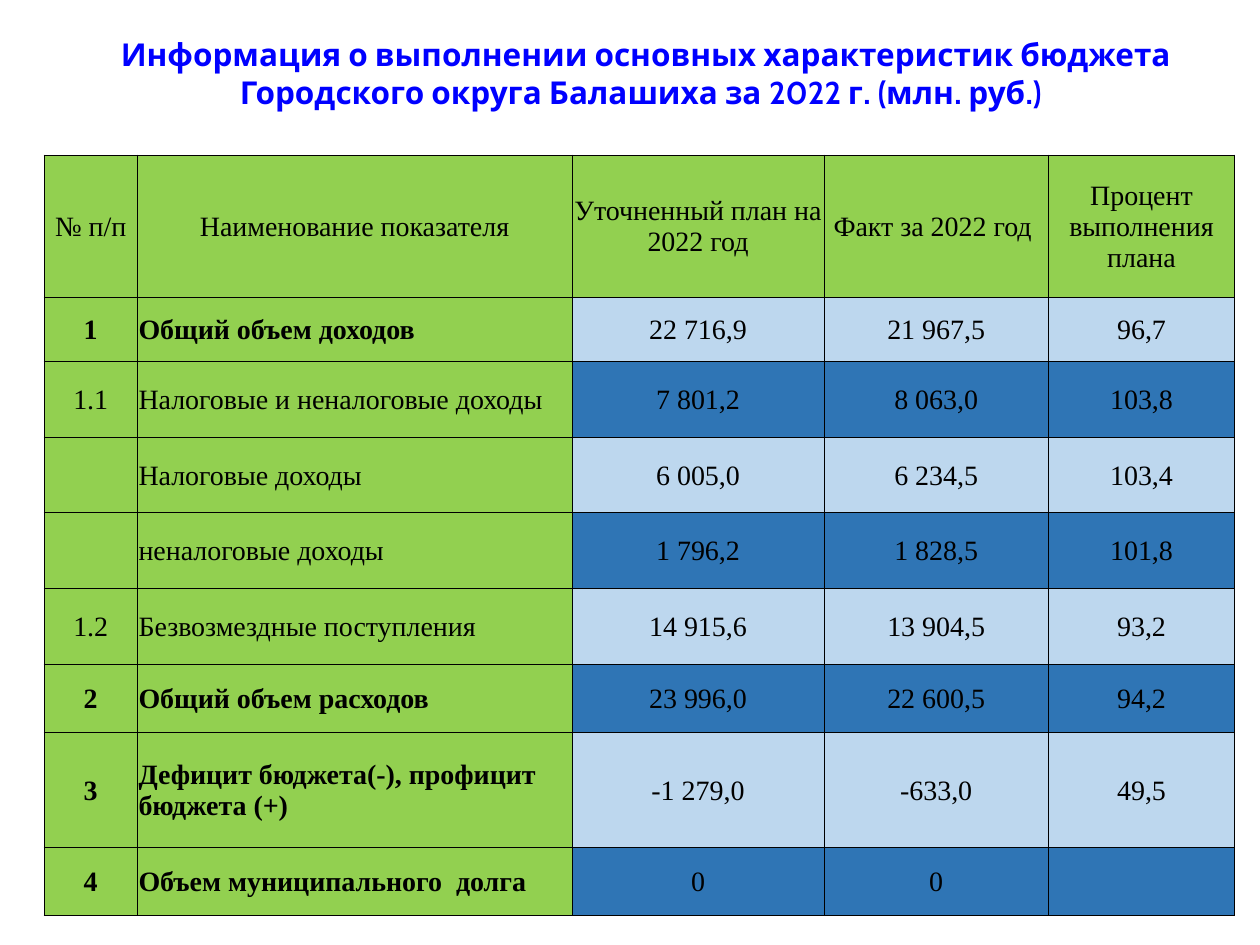
from pptx import Presentation
from pptx.dml.color import RGBColor
from pptx.enum.text import MSO_ANCHOR as Anchor, MSO_AUTO_SIZE as AutoSize, PP_ALIGN as Align
from pptx.oxml import parse_xml
from pptx.oxml.ns import nsdecls
from pptx.util import Inches, Pt

TITLE = ("Информация о выполнении основных характеристик бюджета \v"
         "Городского округа Балашиха за 2022 г. (млн. руб.)\t")
ROWS = [
    ("№ п/п", "Наименование показателя", "Уточненный план на 2022 год",
     "Факт за 2022 год ", "Процент выполнения плана"),
    ("1", "Общий объем доходов", "22 716,9", "21 967,5", "96,7"),
    ("1.1", "Налоговые и неналоговые доходы", "7 801,2", "8 063,0", "103,8"),
    ("", "Налоговые доходы", "6 005,0", "6 234,5", "103,4"),
    ("", "неналоговые доходы", "1 796,2", "1 828,5", "101,8"),
    ("1.2", "Безвозмездные поступления", "14 915,6", "13 904,5", "93,2"),
    ("2", "Общий объем расходов", "23 996,0", "22 600,5", "94,2"),
    ("3", "Дефицит бюджета(-), профицит бюджета (+)", "-1 279,0", "-633,0", "49,5"),
    ("4", "Объем муниципального  долга", "0", "0", ""),
]
COLUMN_WIDTHS = [0.74, 3.45, 2, 1.78, 1.48]
ROW_HEIGHTS = [1.13, 0.51, 0.6, 0.6, 0.6, 0.6, 0.54, 0.92, 0.54]


def color(code):
    return RGBColor.from_string(code)


class BudgetSlide:
    title_font = "Cabin"
    table_font = "Times New Roman"
    title_color = "0000FF"
    ink = "000000"
    label_fill = "92D050"
    value_fills = ("2F75B5", "BDD7EE")

    def __init__(self, deck):
        self.page = deck.slides.add_slide(deck.slide_layouts[5])

    def style(self, para, font, size, code, bold, align):
        para.alignment = align
        para.font.name = font
        para.font.size = Pt(size)
        para.font.bold = bold
        para.font.color.rgb = color(code)

    def title(self, text, left, top, width, height):
        box = self.page.shapes.title
        box.left, box.top = Inches(left), Inches(top)
        box.width, box.height = Inches(width), Inches(height)
        frame = box.text_frame
        frame.text = text
        frame.word_wrap = True
        frame.auto_size = AutoSize.SHAPE_TO_FIT_TEXT
        frame.vertical_anchor = Anchor.TOP
        self.style(frame.paragraphs[0], self.title_font, 18, self.title_color,
                   True, Align.CENTER)

    def border(self, cell):
        properties = cell._tc.get_or_add_tcPr()
        for side in ("lnL", "lnR", "lnT", "lnB"):
            properties.append(parse_xml(
                f'<a:{side} {nsdecls("a")} w="{Pt(0.5)}"><a:solidFill>'
                f'<a:srgbClr val="{self.ink}"/></a:solidFill></a:{side}>'))

    def cell(self, cell, text, fill, bold, align):
        self.border(cell)
        cell.fill.solid()
        cell.fill.fore_color.rgb = color(fill)
        cell.margin_left = cell.margin_right = cell.margin_top = Inches(0.01)
        cell.margin_bottom = 0
        cell.vertical_anchor = Anchor.MIDDLE
        cell.text = text
        self.style(cell.text_frame.paragraphs[0], self.table_font, 16, self.ink,
                   bold, align)

    def table(self, rows, widths, heights, left, top):
        table = self.page.shapes.add_table(
            len(rows), len(widths), Inches(left), Inches(top),
            Inches(sum(widths)), Inches(sum(heights))).table
        table.first_row = table.horz_banding = False
        for column, width in zip(table.columns, widths):
            column.width = Inches(width)
        for row, height in zip(table.rows, heights):
            row.height = Inches(height)
        for r, values in enumerate(rows):
            for c, text in enumerate(values):
                is_label = r == 0 or c < 2
                fill = self.label_fill if is_label else self.value_fills[r % 2]
                bold = c < 2 and values[0].isdigit()
                align = Align.LEFT if r > 0 and c == 1 else Align.CENTER
                self.cell(table.cell(r, c), text, fill, bold, align)


def main():
    deck = Presentation()
    deck.slide_width, deck.slide_height = Inches(10), Inches(7.5)
    slide = BudgetSlide(deck)
    slide.title(TITLE, 0.78, 0.23, 8.75, 0.71)
    slide.table(ROWS, COLUMN_WIDTHS, ROW_HEIGHTS, 0.35, 1.23)
    deck.save("out.pptx")


if __name__ == "__main__":
    main()
